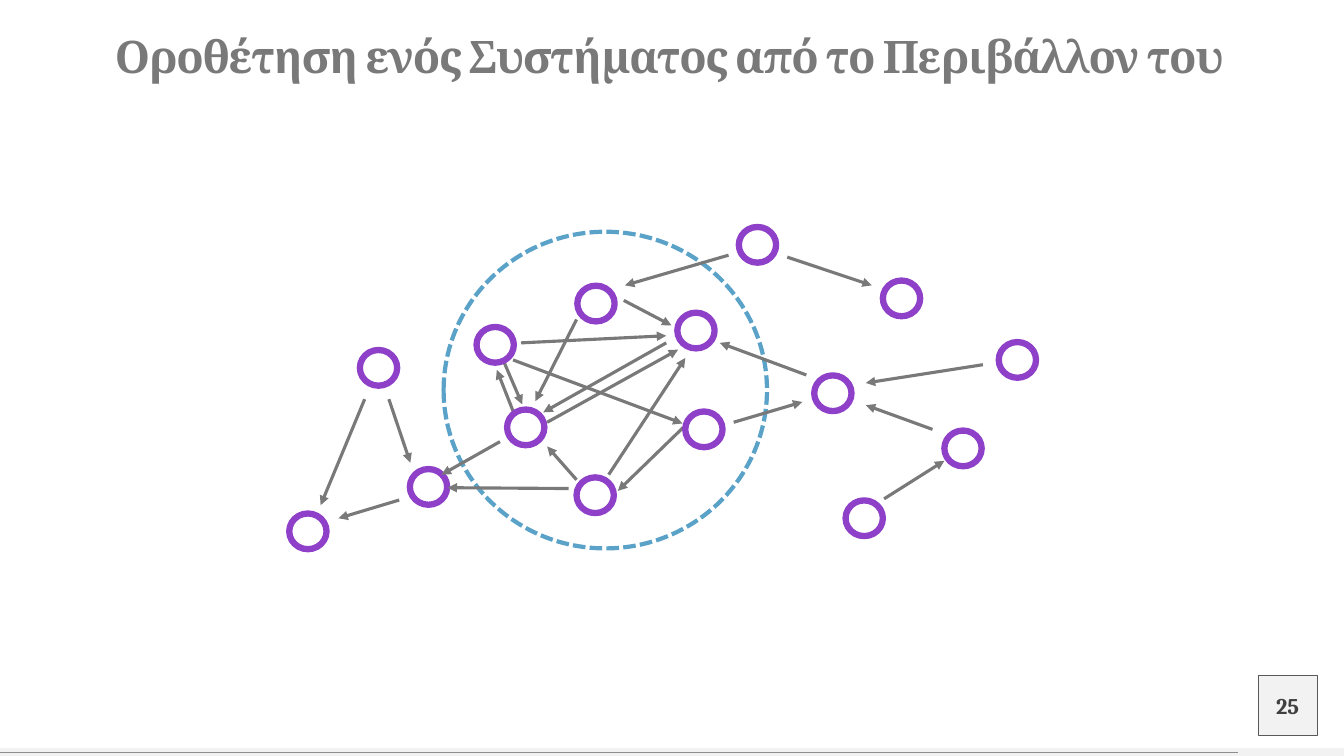
from pptx import Presentation
from pptx.dml.color import RGBColor
from pptx.enum.dml import MSO_LINE
from pptx.enum.shapes import MSO_CONNECTOR, MSO_SHAPE
from pptx.enum.text import MSO_ANCHOR, PP_ALIGN
from pptx.oxml.ns import qn
from pptx.util import Cm, Pt
from lxml.etree import SubElement

GREY, PURPLE, BLUE, PALE = "797979", "8E40C8", "5AA2C8", "F2F2F2"

# Node centres in cm, measured from the corner of the diagram
LEFT = [(2.54, 3.77), (3.8, 6.77), (0.76, 7.89)]
INNER = [(5.48, 3.19), (6.25, 5.27), (8.02, 2.15),
         (10.54, 2.83), (10.74, 5.32), (8, 6.98)]
RIGHT = [(12.09, 0.67), (15.72, 2.02), (13.99, 4.41),
         (18.64, 3.57), (17.27, 5.8), (14.78, 7.56)]

# Arrows as x1, y1, x2, y2 in cm
LINKS = [
    (7.53, 2.55, 6.49, 4.61), (8.72, 2.07, 9.92, 2.7),
    (6.13, 3.14, 9.79, 2.96), (5.93, 3.57, 10.2, 5.17),
    (5.7, 3.62, 6.16, 4.69), (5.95, 4.91, 5.52, 3.82),
    (7.33, 6.81, 4.28, 6.79), (8.34, 6.46, 10.27, 3.52),
    (6.79, 5.14, 10.09, 3.31), (10.22, 5.27, 8.57, 6.87),
]
CROSS = [
    (2.19, 4.56, 1.08, 7.23), (2.8, 4.56, 3.34, 6.16),
    (3.06, 7.1, 1.53, 7.56), (5.6, 5.63, 4.13, 6.46),
    (9.79, 3.14, 6.69, 4.89), (7.53, 6.59, 6.79, 5.75),
    (11.36, 0.93, 8.75, 1.69), (12.84, 0.98, 14.97, 1.69),
    (11.49, 5.14, 13.22, 4.63), (15.28, 7.07, 16.8, 6.11),
    (17.77, 3.69, 14.82, 4.15), (16.5, 5.32, 14.82, 4.71),
    (13.32, 3.95, 11.14, 3.14),
]


def paint(part, tone):
    part.rgb = RGBColor.from_string(tone)


def draw(slide, kind, x, y, w, h, fill, line=None, width=1):
    shape = slide.shapes.add_shape(kind, Cm(x), Cm(y), Cm(w), Cm(h))
    shape.shadow.inherit = False
    shape.fill.solid()
    paint(shape.fill.fore_color, fill)
    if line:
        paint(shape.line.color, line)
        shape.line.width = Pt(width)
    else:
        shape.line.fill.background()
    return shape


def join(slide, x1, y1, x2, y2, tone=GREY, width=2.25, head=True):
    line = slide.shapes.add_connector(
        MSO_CONNECTOR.STRAIGHT, Cm(x1), Cm(y1), Cm(x2), Cm(y2))
    paint(line.line.color, tone)
    line.line.width = Pt(width)
    if head:
        SubElement(line.line._get_or_add_ln(), qn("a:tailEnd"), type="triangle")
    SubElement(line._element.spPr, qn("a:effectLst"))


def write(shape, text, size, tone):
    frame = shape.text_frame
    frame.word_wrap = True
    frame.vertical_anchor = MSO_ANCHOR.MIDDLE
    frame.margin_left = frame.margin_right = 0
    frame.margin_top = frame.margin_bottom = 0
    para = frame.paragraphs[0]
    para.alignment = PP_ALIGN.CENTER
    run = para.add_run()
    run.text = text
    run.font.name = "Cambria"
    run.font.size = Pt(size)
    run.font.bold = True
    paint(run.font.color, tone)
    return para, run


def add_title(slide, x, y, w, h):
    title = slide.shapes.title
    title.left, title.top, title.width, title.height = Cm(x), Cm(y), Cm(w), Cm(h)
    para, run = write(
        title, "Οροθέτηση ενός Συστήματος από το Περιβάλλον του", 32, GREY)
    para.line_spacing = 0.9
    run.font._element.set("spc", "-100")


def add_footer(slide, x, y, w, h):
    # Bottom strip with its upper rule
    draw(slide, MSO_SHAPE.RECTANGLE, x, y, w, h, PALE)
    join(slide, x, y + 0.12, x + 31.2, y + 0.12, "8E8E8E", 0.5, False)
    # Page number
    page = draw(slide, MSO_SHAPE.RECTANGLE, x + w - 2.17, y - 1.83,
                1.5, 1.5, PALE, "595959", 0.25)
    write(page, "25", 16, "404040")


def add_nodes(slide, x, y, spots):
    w, h = 0.94, 0.9
    for cx, cy in spots:
        draw(slide, MSO_SHAPE.FLOWCHART_CONNECTOR, x + cx - w / 2,
             y + cy - h / 2, w, h, "FFFFFF", PURPLE, 4.5)


def add_links(slide, x, y, links):
    for x1, y1, x2, y2 in links:
        join(slide, x + x1, y + y1, x + x2, y + y2)


def add_system(slide, x, y):
    add_nodes(slide, x, y, LEFT)
    # System boundary
    ring = draw(slide, MSO_SHAPE.OVAL, x + 4.18, y + 0.34, 8.15, 7.98,
                "FFFFFF", BLUE, 3)
    ring.line.dash_style = MSO_LINE.SQUARE_DOT
    # Links inside the system, then nodes, then links on top
    add_links(slide, x, y, LINKS)
    add_nodes(slide, x, y, INNER + RIGHT)
    add_links(slide, x, y, CROSS)


def main():
    deck = Presentation()
    deck.slide_width, deck.slide_height = Cm(33.87), Cm(19.05)
    slide = deck.slides.add_slide(deck.slide_layouts[5])
    add_footer(slide, 0, 18.85, 33.87, 0.2)
    add_title(slide, 1.12, 0.89, 31.5, 1.19)
    add_system(slide, 7, 5.5)
    deck.save("out.pptx")


if __name__ == "__main__":
    main()
